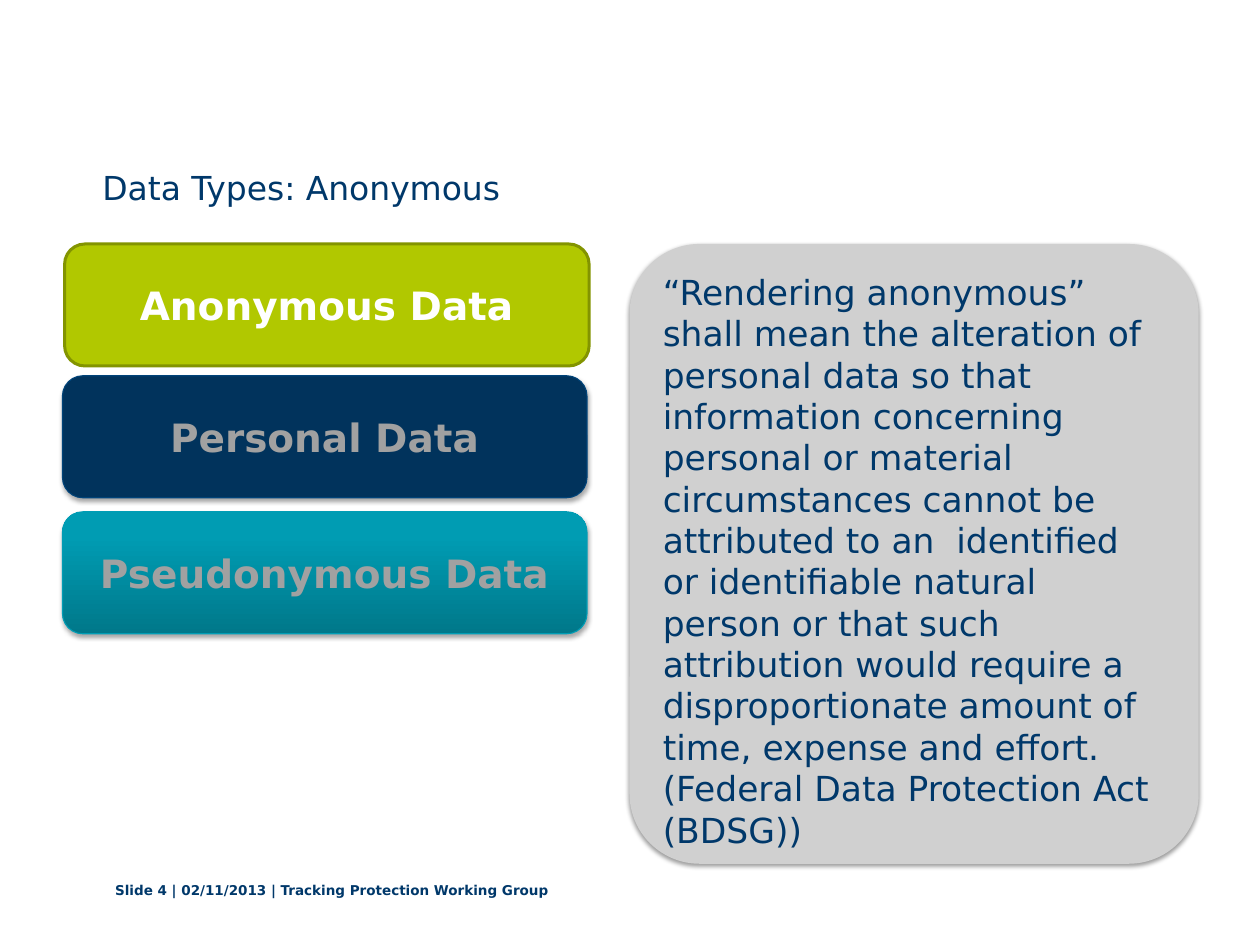
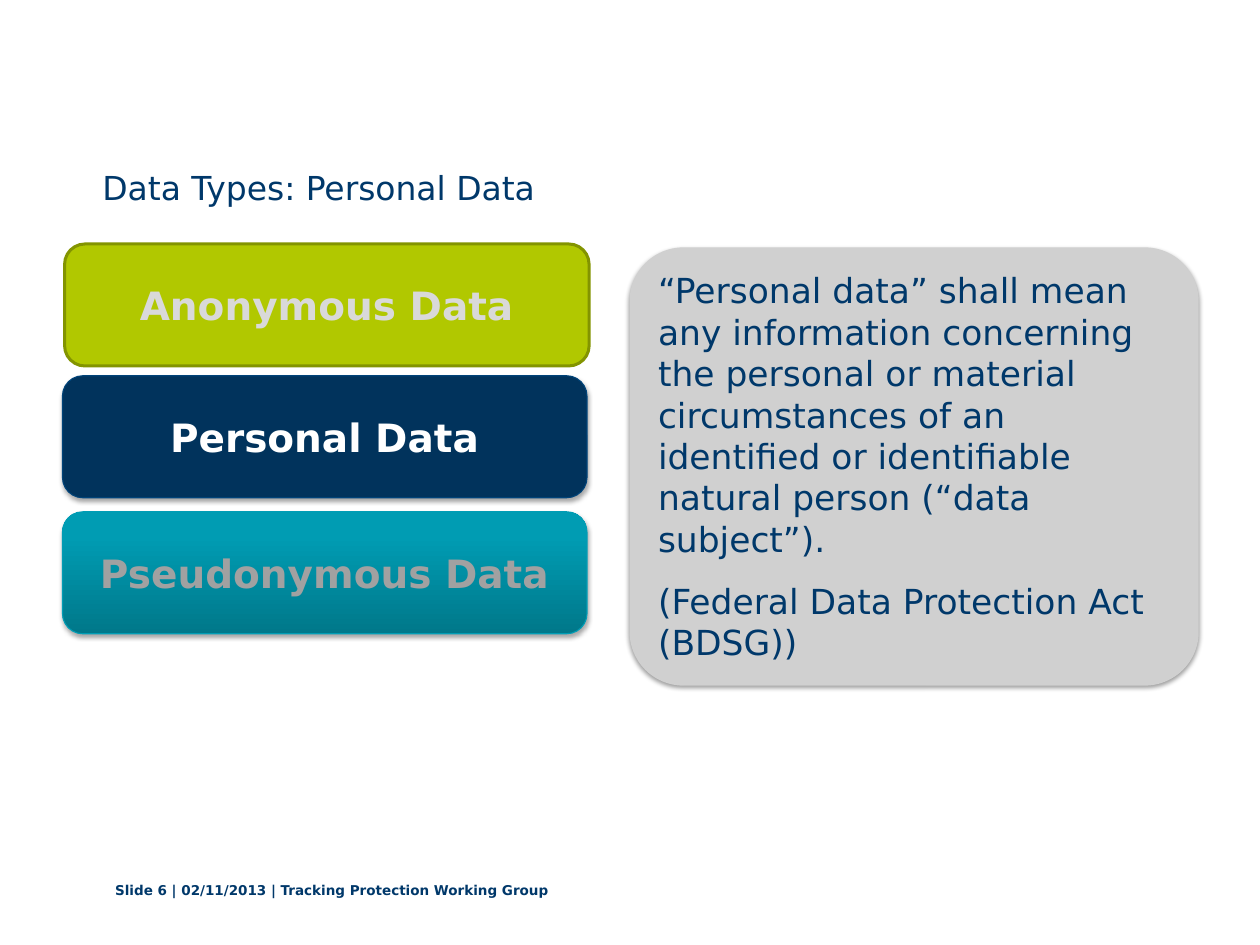
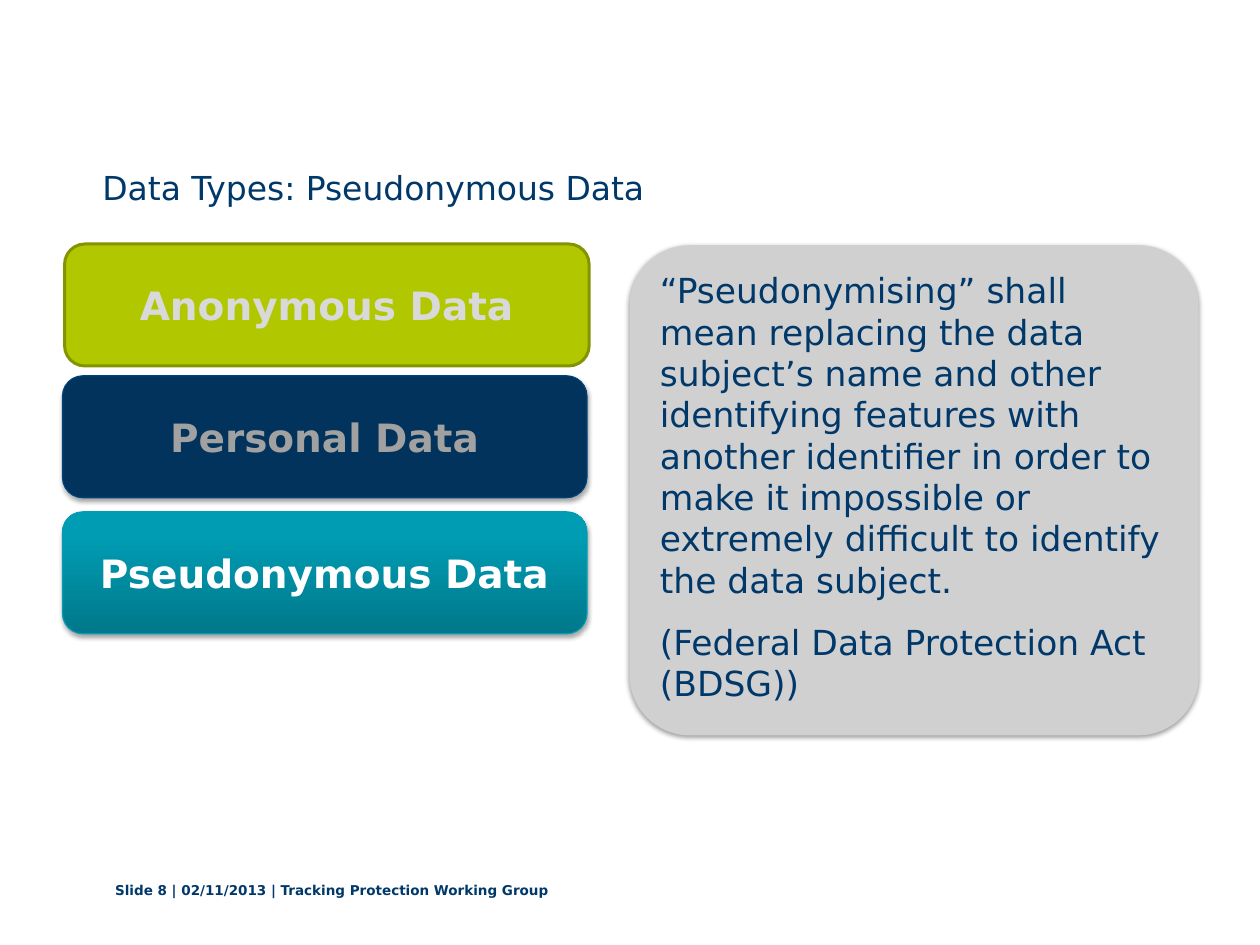
from pptx import Presentation
from pptx.dml.color import RGBColor
from pptx.enum.shapes import MSO_SHAPE
from pptx.enum.text import MSO_ANCHOR, PP_ALIGN
from pptx.oxml import parse_xml
from pptx.oxml.ns import nsdecls
from pptx.util import Cm, Pt

ROUND = MSO_SHAPE.ROUNDED_RECTANGLE
TOP, MID = MSO_ANCHOR.TOP, MSO_ANCHOR.MIDDLE
LEFT, CENTER = PP_ALIGN.LEFT, PP_ALIGN.CENTER

FONT = "DejaVu Sans"
NAVY, WHITE, GREY = "00386A", "FFFFFF", "D0D0D0"
TEAL = [(0, "00788A"), (80, "009CB3"), (100, "009DB4")]

# Boxes in cm: left, top, width, height
HEAD = (2.41, 3.71, 25.15, 2.49)
FOOT = (2.41, 20.6, 25.1, 0.36)
STACK = (1.47, 5.74, 12.34, 9.17)
PILL_H = 2.87

# Label, offset in the stack, fill, line, line width, muted text, shadow
PILLS = [
    ("Anonymous Data", 0.05, 0, "B1C800", "839400", 2, "D9D9D9", False),
    ("Personal Data", 0, 3.1, "01335C", "004379", 0.75, "A1A1A1", True),
    ("Pseudonymous Data", 0, 6.3, TEAL, "009DB5", 0.75, "A1A1A1", True),
]

LAW = "(Federal Data Protection Act (BDSG))"
# Slide number, title, active pill, panel top, panel height, gap, text
SLIDES = [
    (4, "Anonymous", 0, 5.74, 14.58, 0,
     "“Rendering anonymous” shall mean the alteration of personal data so that "
     "information concerning personal or material circumstances cannot be "
     "attributed to an  identified or identifiable natural person or that such "
     "attribution would require a  disproportionate amount of time, expense "
     "and effort."),
    (6, "Personal Data", 1, 5.82, 10.31, 14,
     "“Personal data” shall mean any information concerning the personal or "
     "material circumstances of an identified or identifiable natural person "
     "(“data subject”)."),
    (8, "Pseudonymous Data", 2, 5.77, 11.53, 14,
     "“Pseudonymising” shall mean replacing the data subject’s name and other "
     "identifying features with another identifier in order to make it "
     "impossible or extremely difficult to identify the data subject."),
]


def color(code):
    return RGBColor.from_string(code)


def write(shape, *lines, size, tint=NAVY, bold=False, align=LEFT, anchor=TOP,
          pad=(0.3, 0.15), gap=0, lead=None):
    """Fill a shape with one paragraph per line; gap parts the paragraphs."""
    frame = shape.text_frame
    frame.word_wrap = True
    frame.vertical_anchor = anchor
    frame.margin_left = frame.margin_right = Cm(pad[0])
    frame.margin_top = frame.margin_bottom = Cm(pad[1])
    for i, line in enumerate(lines):
        para = frame.add_paragraph() if i else frame.paragraphs[0]
        para.alignment = align
        para.space_before = Pt(gap if i else 0)
        if lead:
            para.line_spacing = Pt(lead)
        run = para.add_run()
        run.text = line
        font = run.font
        font.name, font.size, font.bold = FONT, Pt(size), bold
        font.color.rgb = color(tint)


def text(slide, box, *lines, **form):
    write(slide.shapes.add_textbox(*map(Cm, box)), *lines, **form)


def blend(shape, stops):
    """Give the shape a gradient that runs from bottom to top."""
    marks = "".join(
        f'<a:gs pos="{pos * 1000}"><a:srgbClr val="{code}"/></a:gs>'
        for pos, code in stops)
    shape._element.spPr.prstGeom.addnext(parse_xml(
        f'<a:gradFill {nsdecls("a")} rotWithShape="1"><a:gsLst>{marks}</a:gsLst>'
        '<a:lin ang="16200000" scaled="0"/></a:gradFill>'))


def shade(shape, alpha, dist):
    """Cast a soft black shadow downwards."""
    shape._element.spPr.effectLst.append(parse_xml(
        f'<a:outerShdw {nsdecls("a")} blurRad="{Pt(3.1)}" dist="{Pt(dist)}" '
        'dir="5400000" rotWithShape="0"><a:srgbClr val="000000">'
        f'<a:alpha val="{alpha * 1000}"/></a:srgbClr></a:outerShdw>'))


def card(slide, box, fill, line=None, width=0):
    """Add a rounded box with a plain or gradient fill."""
    shape = slide.shapes.add_shape(ROUND, *map(Cm, box))
    shape.shadow.inherit = False
    if isinstance(fill, str):
        shape.fill.solid()
        shape.fill.fore_color.rgb = color(fill)
    else:
        blend(shape, fill)
    if line:
        shape.line.color.rgb = color(line)
        shape.line.width = Pt(width)
    else:
        shape.line.fill.background()
    return shape


def stack(slide, box, active):
    """Add the three data types, with the active one in white."""
    x, y, w, _ = box
    for i, (label, dx, dy, fill, line, width, muted, dark) in enumerate(PILLS):
        pill = card(slide, (x + dx, y + dy, w, PILL_H), fill, line, width)
        if dark:
            shade(pill, 35, 1.8)
        write(pill, label, size=26, tint=WHITE if i == active else muted,
              bold=True, align=CENTER, anchor=MID)


def panel(slide, box, body, gap):
    """Add the grey panel with the definition and its source."""
    shape = card(slide, box, GREY)
    shape.adjustments[0] = 0.123
    shade(shape, 38, 1.6)
    write(shape, body, LAW, size=23, gap=gap)


def frame(slide, num, name):
    """Add the title and the footer."""
    text(slide, HEAD, f"Data Types: {name}", size=22, pad=(0, 0), lead=33)
    text(slide, FOOT, f"Slide {num} | 02/11/2013 | Tracking Protection Working Group",
         size=9, bold=True)


def main():
    deck = Presentation()
    deck.slide_width, deck.slide_height = Cm(29.64), Cm(22.23)
    for num, name, active, top, high, gap, body in SLIDES:
        slide = deck.slides.add_slide(deck.slide_layouts[6])
        frame(slide, num, name)
        panel(slide, (14.81, top, 13.39, high), body, gap)
        stack(slide, STACK, active)
    deck.save("out.pptx")


if __name__ == "__main__":
    main()
